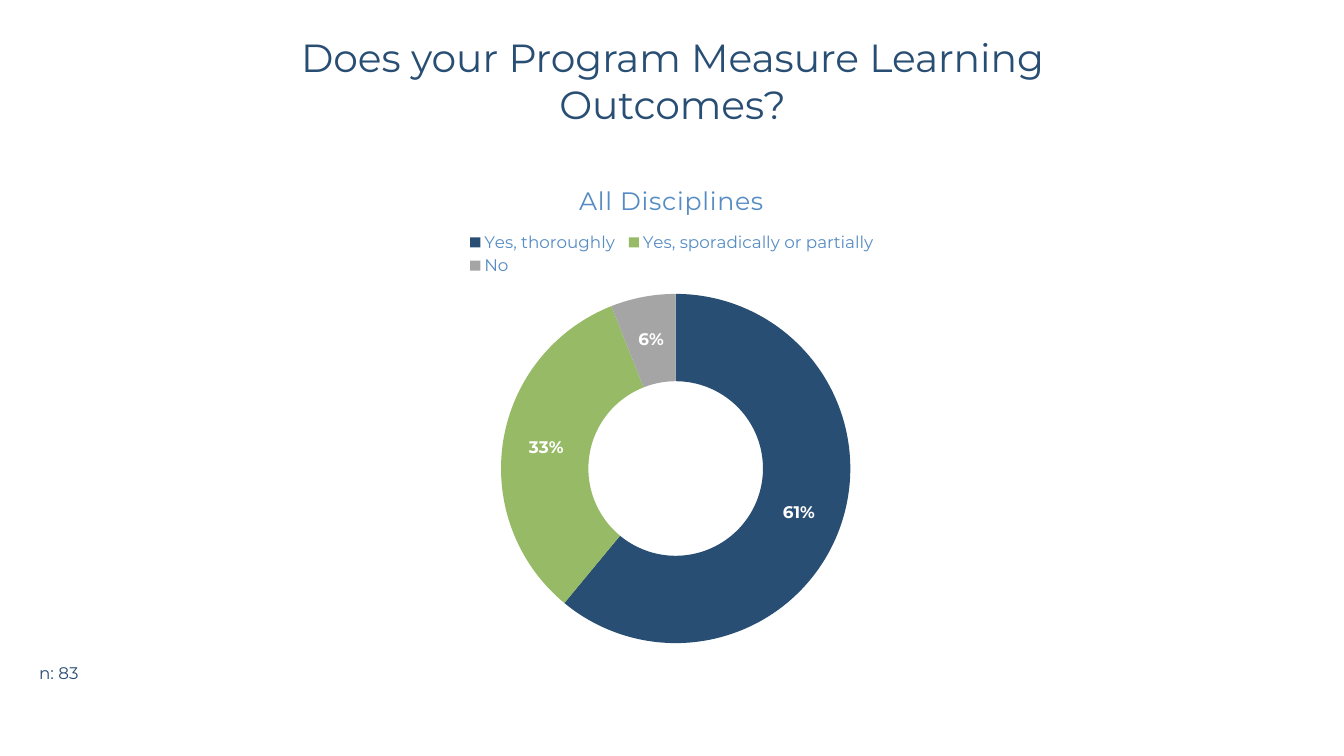
from lxml import etree
from pptx import Presentation
from pptx.chart.data import CategoryChartData
from pptx.dml.color import RGBColor
from pptx.enum import chart as ch, text as tx
from pptx.oxml import parse_xml
from pptx.oxml.ns import nsdecls, qn
from pptx.util import Inches, Pt

NAVY = RGBColor(0x29, 0x4E, 0x73)
BLUE = RGBColor(0x55, 0x8C, 0xC3)
GREEN = RGBColor(0x96, 0xBA, 0x65)
GREY = RGBColor(0xA5, 0xA5, 0xA5)
WHITE = RGBColor(0xFF, 0xFF, 0xFF)
FACE = "Montserrat"

ANSWERS = [
    ("Yes, thoroughly", 61, NAVY),
    ("Yes, sporadically or partially", 33, GREEN),
    ("No", 6, GREY),
]


def style_font(font, size, color, bold=False):
    for attribute, value in {"name": FACE, "size": Pt(size), "bold": bold}.items():
        setattr(font, attribute, value)
    font.color.rgb = color


def fill_text(frame, wording, size, align):
    frame.word_wrap = True
    frame.vertical_anchor = tx.MSO_ANCHOR.TOP
    frame.text = wording
    paragraph = frame.paragraphs[0]
    paragraph.alignment = align
    paragraph.line_spacing = 1.0
    style_font(paragraph.runs[0].font, size, NAVY)


def place_part(part, **fractions):
    """Fix a chart part at fractions (x, y, w, h) of the chart's box."""
    for old in part.findall(qn("c:layout")):
        part.remove(old)
    layout = parse_xml(f"<c:layout {nsdecls('c')}><c:manualLayout/></c:layout>")
    manual = layout[0]
    for axis in "xy":
        etree.SubElement(manual, qn(f"c:{axis}Mode"), val="edge")
    for side, share in fractions.items():
        etree.SubElement(manual, qn(f"c:{side}"), val=str(share))
    leaders = ("c:tx", "c:legendPos")
    before = [child for child in part if child.tag in map(qn, leaders)]
    part.insert(len(before), layout)


def add_heading(slide, left, top, width, height):
    heading = slide.shapes.title
    heading.left, heading.top, heading.width, heading.height = left, top, width, height
    fill_text(heading.text_frame, "Does your Program Measure Learning Outcomes?",
              28, tx.PP_ALIGN.CENTER)


def add_sample_size(slide, left, top, width, height):
    sample = slide.shapes.add_textbox(left, top, width, height)
    fill_text(sample.text_frame, "n: 83", 12, tx.PP_ALIGN.LEFT)


def add_outcomes_chart(slide, left, top, width, height):
    names, shares, colors = zip(*ANSWERS)
    data = CategoryChartData()
    data.categories = names
    data.add_series("Series 1", shares)
    chart = slide.shapes.add_chart(
        ch.XL_CHART_TYPE.DOUGHNUT, left, top, width, height, data).chart
    style_font(chart.font, 10, NAVY)

    chart.has_title = True
    chart.chart_title.include_in_layout = False
    chart.chart_title.text_frame.text = "All Disciplines"
    title_font = chart.chart_title.text_frame.paragraphs[0].runs[0].font
    style_font(title_font, 18, BLUE)
    title_font._element.set("spc", "50")

    chart.has_legend = True
    chart.legend.position = ch.XL_LEGEND_POSITION.TOP
    chart.legend.include_in_layout = False
    style_font(chart.legend.font, 12, BLUE)

    plot = chart.plots[0]
    plot.vary_by_categories = True
    plot._element.find(qn("c:holeSize")).set("val", "50")
    for index, color in enumerate(colors):
        slice_format = plot.series[0].points[index].format
        slice_format.fill.solid()
        slice_format.fill.fore_color.rgb = color
        slice_format.line.fill.background()

    plot.has_data_labels = True
    labels = plot.data_labels
    for attribute, value in {"show_percentage": True, "show_value": False,
                             "number_format": "0%",
                             "number_format_is_linked": False}.items():
        setattr(labels, attribute, value)
    style_font(labels.font, 12, WHITE, bold=True)

    place_part(chart.chart_title._element, x=0.37, y=0.04)
    place_part(chart.legend._element, x=0.22, y=0.14, w=0.56, h=0.1)
    place_part(plot._element.getparent(), x=0.27, y=0.27, w=0.47, h=0.7)


def main():
    deck = Presentation()
    deck.slide_width, deck.slide_height = Inches(13.33), Inches(7.5)
    slide = deck.slides.add_slide(deck.slide_layouts[5])
    add_heading(slide, Inches(2.35), Inches(0.28), Inches(8.64), Inches(1.04))
    add_sample_size(slide, Inches(0.29), Inches(6.53), Inches(0.96), Inches(0.3))
    add_outcomes_chart(slide, Inches(2.95), Inches(1.58), Inches(7.43), Inches(4.95))
    deck.save("out.pptx")


if __name__ == "__main__":
    main()
